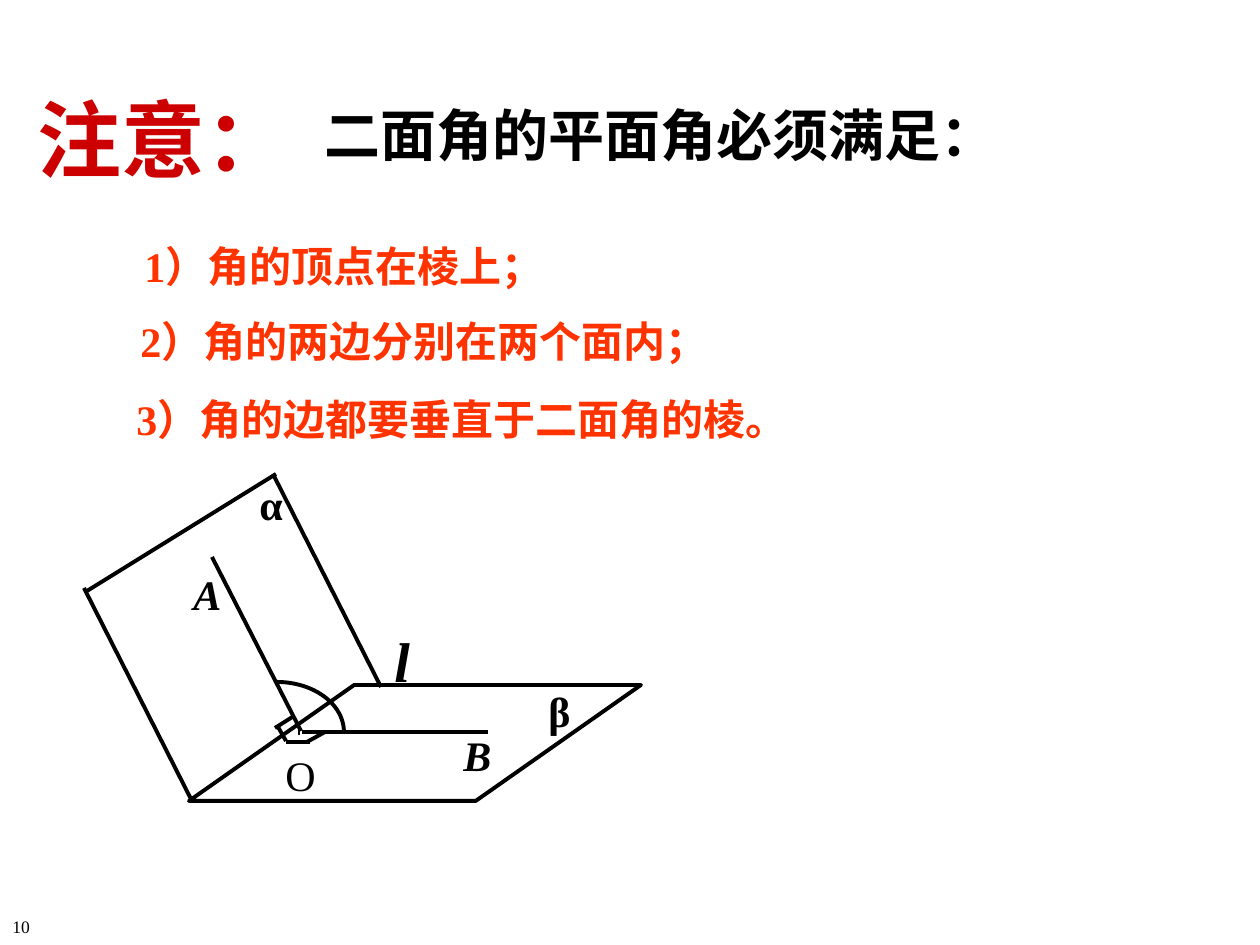
from dataclasses import dataclass

from lxml.etree import SubElement
from pptx import Presentation
from pptx.dml.color import RGBColor
from pptx.enum.shapes import MSO_CONNECTOR, MSO_SHAPE
from pptx.enum.text import MSO_ANCHOR, MSO_AUTO_SIZE, PP_ALIGN
from pptx.oxml.ns import qn
from pptx.util import Emu, Pt

PX_PER_INCH = 126
COLORS = {"black": "000000", "warning": "CC0000", "rule": "FF3300"}
SERIF = "Times New Roman"


def px(n: int) -> Emu:
    return Emu(round(n * 914400 / PX_PER_INCH))


@dataclass
class Label:
    text: str
    left: int
    top: int
    width: int
    height: int
    size: int = 24
    color: str = "black"
    bold: bool = True
    italic: bool = False
    font: str = SERIF


@dataclass
class Segment:
    x1: int
    y1: int
    x2: int
    y2: int
    weight: float = 2.25


TITLE = Label("二面角的平面角必须满足：", 312, 94, 747, 79, size=32)

LABELS = [
    Label("注意：", 25, 81, 287, 113, size=48, color="warning", font="Arial"),
    # Three conditions
    Label("1）角的顶点在棱上；", 132, 234, 431, 64, color="rule"),
    Label("2）角的两边分别在两个面内；", 128, 309, 601, 64, color="rule"),
    Label("3）角的边都要垂直于二面角的棱。", 124, 387, 735, 64, color="rule"),
    # Names in the figure
    Label("α", 247, 472, 52, 63),
    Label("β", 536, 679, 49, 63),
    Label("l", 382, 620, 40, 79, size=32, italic=True),
    Label("O", 273, 743, 55, 63, bold=False),
    Label("A", 181, 562, 53, 63, italic=True),
    Label("B", 451, 723, 53, 63, italic=True),
    # Page number
    Label("10", 0, 910, 43, 34, size=10, bold=False),
]

SEGMENTS = [
    # Half-plane α
    Segment(192, 801, 84, 588),
    Segment(381, 687, 273, 474),
    Segment(87, 591, 276, 474),
    # Sides OA and OB
    Segment(301, 731, 212, 557),
    Segment(302, 732, 488, 732),
    # Right-angle marks at O
    Segment(286, 742, 310, 742),
    Segment(307, 742, 325, 732),
    Segment(294, 716, 275, 728),
    Segment(277, 725, 286, 741),
    Segment(299, 725, 299, 735, weight=0.75),
]


def rgb(name: str) -> RGBColor:
    return RGBColor.from_string(COLORS[name])


def write(s, label: Label, wrap: bool) -> None:
    """Place a text shape and fill it with one formatted paragraph."""
    s.left, s.top = px(label.left), px(label.top)
    s.width, s.height = px(label.width), px(label.height)
    tf = s.text_frame
    tf.word_wrap = wrap
    tf.auto_size = MSO_AUTO_SIZE.NONE
    tf.vertical_anchor = MSO_ANCHOR.TOP
    p = tf.paragraphs[0]
    p.text = label.text
    p.alignment = PP_ALIGN.LEFT
    font = p.font
    font.name, font.size = label.font, Pt(label.size)
    font.bold, font.italic = label.bold, label.italic
    font.color.rgb = rgb(label.color)


def add_label(slide, label: Label) -> None:
    write(slide.shapes.add_textbox(0, 0, 0, 0), label, wrap=False)


def set_line(s, weight: float) -> None:
    s.line.color.rgb = rgb("black")
    s.line.width = Pt(weight)


def add_segment(slide, seg: Segment) -> None:
    s = slide.shapes.add_connector(
        MSO_CONNECTOR.STRAIGHT, px(seg.x1), px(seg.y1), px(seg.x2), px(seg.y2))
    set_line(s, seg.weight)
    SubElement(s._element.spPr, qn("a:effectLst"))


def add_outline(slide, kind: MSO_SHAPE, left: int, top: int, width: int, height: int):
    s = slide.shapes.add_shape(kind, px(left), px(top), px(width), px(height))
    s.shadow.inherit = False
    s.fill.background()
    set_line(s, 2.25)
    return s


def main() -> None:
    prs = Presentation()
    prs.slide_width, prs.slide_height = px(1260), px(945)
    slide = prs.slides.add_slide(prs.slide_layouts[5])
    write(slide.shapes.title, TITLE, wrap=True)

    # Half-plane β and the arc of the plane angle
    beta = add_outline(slide, MSO_SHAPE.PARALLELOGRAM, 189, 685, 452, 116)
    beta.adjustments[0] = 1.425
    add_outline(slide, MSO_SHAPE.ARC, 210, 682, 134, 100)

    for seg in SEGMENTS:
        add_segment(slide, seg)
    for label in LABELS:
        add_label(slide, label)

    prs.save("out.pptx")


if __name__ == "__main__":
    main()
